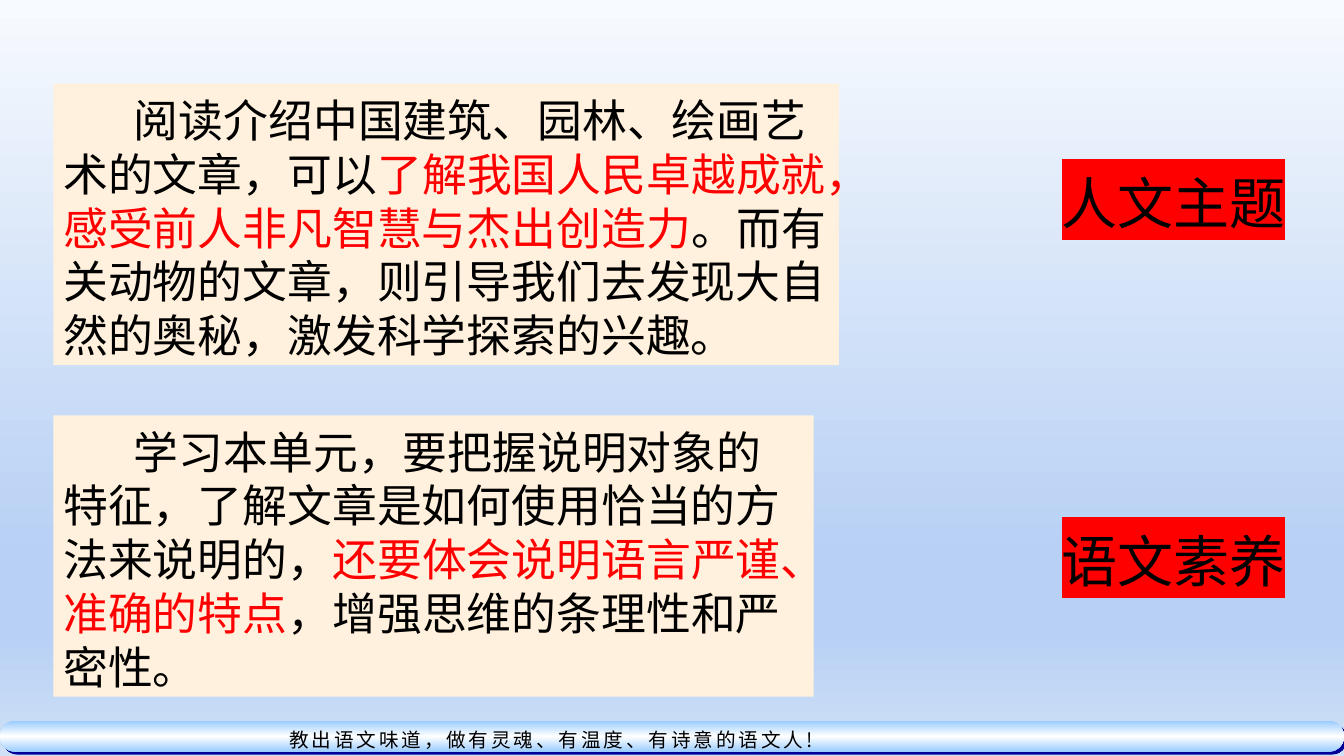
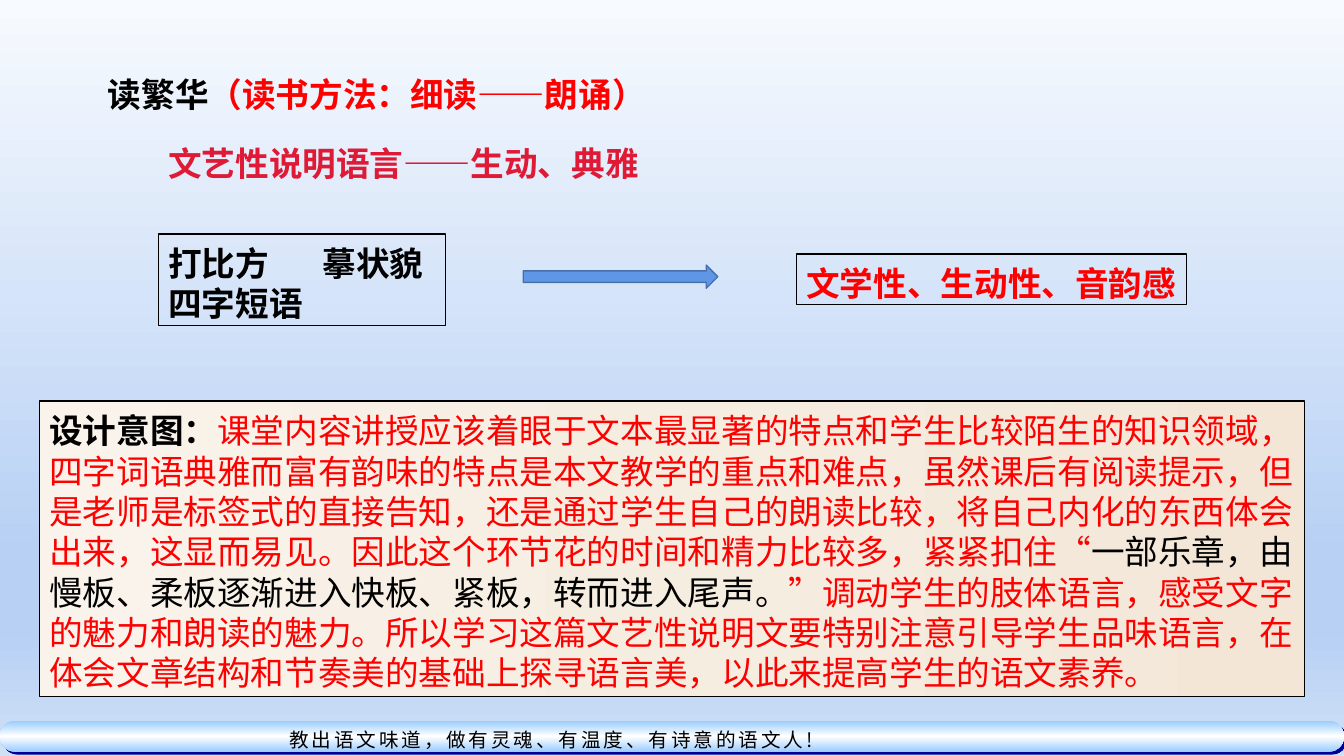
from lxml.etree import SubElement
from pptx import Presentation
from pptx.dml.color import RGBColor
from pptx.enum.shapes import MSO_SHAPE
from pptx.enum.text import MSO_ANCHOR, MSO_AUTO_SIZE, PP_ALIGN
from pptx.oxml import parse_xml
from pptx.oxml.ns import nsdecls, qn
from pptx.util import Inches, Pt

BLACK = RGBColor(0x00, 0x00, 0x00)
RED = RGBColor(0xFF, 0x00, 0x00)
CRIMSON = RGBColor(0xDE, 0x1A, 0x37)
CREAM = RGBColor(0xFF, 0xF1, 0xDD)
ARROW_FILL = RGBColor(0x60, 0x96, 0xE6)
ARROW_LINE = RGBColor(0x47, 0x6F, 0xAA)
PALE, SKY, MIST = (RGBColor(0xF7, 0xFA, 0xFE), RGBColor(0xB7, 0xD0, 0xF4),
                   RGBColor(0xCF, 0xE0, 0xF7))
BAND_BLUE, WHITE = RGBColor(0x99, 0xCC, 0xFF), RGBColor(0xFF, 0xFF, 0xFF)
BAND_SHADOW = RGBColor(0x00, 0x00, 0x99)
SAND = (RGBColor(0xF9, 0xF3, 0xEB), RGBColor(0xF6, 0xED, 0xE1), RGBColor(0xF3, 0xE6, 0xD7))

LATIN, CJK, FOOTER_FONT = "Arial", "Noto Sans CJK SC", "Noto Sans CJK JP"
LINE_FACTOR = 1.2

BACKGROUND_STOPS = [(0, PALE), (74, SKY), (83, SKY), (100, MIST)]
BAND_STOPS = [(0, BAND_BLUE), (50, WHITE), (100, BAND_BLUE)]
INTENT_STOPS = list(zip((0, 50, 100), SAND))
FOOTER = "教出语文味道，做有灵魂、有温度、有诗意的语文人!"

# A paragraph is a list of (text, colour, bold) runs.
PANEL = dict(size=32, fill=CREAM, indent=0.7)
TAG = dict(size=40, highlight=RED, wrap=False)
UNIT_GOALS = [
    dict(PANEL, at=(0.53, 0.83, 7.79, 2.79), paragraphs=[[
        ("阅读介绍中国建筑、园林、绘画艺术的文章，可以", BLACK, False),
        ("了解我国人民卓越成就，感受前人非凡智慧与杰出创造力", RED, False),
        ("。而有关动物的文章，则引导我们去发现大自然的奥秘，激发科学探索的兴趣。", BLACK, False)]]),
    dict(PANEL, at=(0.53, 4.12, 7.54, 2.79), paragraphs=[[
        ("学习本单元，要把握说明对象的特征，了解文章是如何使用恰当的方法来说明的，", BLACK, False),
        ("还要体会说明语言严谨、准确的特点", RED, False),
        ("，增强思维的条理性和严密性。", BLACK, False)]]),
    dict(TAG, at=(10.43, 1.58, 2.42, 0.77), paragraphs=[[("人文主题", BLACK, False)]]),
    dict(TAG, at=(10.43, 5.13, 2.42, 0.77), paragraphs=[[("语文素养", BLACK, False)]]),
]

READING_TITLE = dict(at=(0.97, 0.64, 6.64, 0.5), size=24, paragraphs=[[
    ("读繁华", BLACK, True), ("（读书方法：细读——朗诵）", RED, True)]])
READING_METHOD = [
    dict(at=(1.57, 1.33, 4.87, 0.5), size=24, wrap=False,
         paragraphs=[[("文艺性说明语言——生动、典雅", CRIMSON, True)]]),
    dict(at=(1.57, 2.32, 2.85, 0.91), size=24, outline=BLACK, tab=1.53,
         paragraphs=[[("打比方\t摹状貌", BLACK, True)], [("四字短语", BLACK, True)]]),
    dict(at=(7.9, 2.52, 3.87, 0.5), size=24, outline=BLACK, wrap=False,
         paragraphs=[[("文学性、生动性、音韵感", RED, True)]]),
    dict(at=(0.39, 3.98, 12.55, 2.93), size=24, outline=BLACK, stops=INTENT_STOPS, paragraphs=[[
        ("设计意图：", BLACK, True),
        ("课堂内容讲授应该着眼于文本最显著的特点和学生比较陌生的知识领域，四字词语典雅而富有韵味的特点"
         "是本文教学的重点和难点，虽然课后有阅读提示，但是老师是标签式的直接告知，还是通过学生自己的朗读比较，"
         "将自己内化的东西体会出来，这显而易见。因此这个环节花的时间和精力比较多，紧紧扣住“", RED, False),
        ("一部乐章，由慢板、柔板逐渐进入快板、紧板，转而进入尾声。", BLACK, False),
        ("”调动学生的肢体语言，感受文字的魅力和朗读的魅力。所以学习这篇文艺性说明文要特别注意引导学生品味语言，"
         "在体会文章结构和节奏美的基础上探寻语言美，以此来提高学生的语文素养。", RED, False)]]),
]
ARROW_AT = (5.19, 2.63, 1.93, 0.23)


def inches(box):
    return [Inches(value) for value in box]


def set_all(target, values):
    for name, value in values.items():
        setattr(target, name, value)


def set_gradient(fill, owner, stops, angle):
    """Fill with any number of (percent, colour) stops, angle in degrees clockwise."""
    fill.gradient()
    gradient = next(owner.iter(qn("a:gradFill")))
    stop_list = gradient.find(qn("a:gsLst"))
    stop_list.clear()
    for percent, colour in stops:
        stop = SubElement(stop_list, qn("a:gs"), pos=str(percent * 1000))
        SubElement(stop, qn("a:srgbClr"), val=str(colour))
    direction = gradient.find(qn("a:lin"))
    direction.set("ang", str(angle * 60000))
    direction.set("scaled", "0")


def style_run(run, size, colour, bold=False, latin=LATIN, cjk=CJK, highlight=None):
    set_all(run.font, dict(size=Pt(size), bold=bold, name=latin))
    run.font.color.rgb = colour
    properties = run.font._element if hasattr(run.font, "_element") else run._r.get_or_add_rPr()
    latin_font = properties.find(qn("a:latin"))
    latin_font.addnext(parse_xml(f'<a:ea {nsdecls("a")} typeface="{cjk}"/>'))
    if highlight is not None:
        latin_font.addprevious(parse_xml(
            f'<a:highlight {nsdecls("a")}><a:srgbClr val="{highlight}"/></a:highlight>'))
    return properties


def write_text(shape, content):
    frame = shape.text_frame
    set_all(frame, dict(
        auto_size=MSO_AUTO_SIZE.NONE, word_wrap=content.get("wrap", True),
        vertical_anchor=MSO_ANCHOR.TOP, margin_left=Inches(0.1), margin_right=Inches(0.1),
        margin_top=Inches(0.09), margin_bottom=Inches(0.01)))
    size = content["size"]
    for index, runs in enumerate(content["paragraphs"]):
        paragraph = frame.add_paragraph() if index else frame.paragraphs[0]
        properties = paragraph._p.get_or_add_pPr()
        if "indent" in content:
            properties.set("indent", str(Inches(content["indent"])))
        if "tab" in content:
            properties.append(parse_xml(
                f'<a:tabLst {nsdecls("a")}><a:tab pos="{Inches(content["tab"])}" algn="l"/></a:tabLst>'))
        set_all(paragraph, dict(alignment=PP_ALIGN.LEFT, line_spacing=Pt(size * LINE_FACTOR)))
        for text, colour, bold in runs:
            run = paragraph.add_run()
            run.text = text
            style_run(run, size, colour, bold, highlight=content.get("highlight"))


def add_block(slide, content):
    block = slide.shapes.add_textbox(*inches(content["at"]))
    if "fill" in content:
        block.fill.solid()
        block.fill.fore_color.rgb = content["fill"]
    if "stops" in content:
        set_gradient(block.fill, block.element, content["stops"], 0)
    if "outline" in content:
        block.line.color.rgb = content["outline"]
        block.line.width = Pt(1)
    write_text(block, content)


def build_master(master, slide):
    """Give the master its background, band and footer, drawn on a slide and moved over."""
    set_gradient(master.background.fill, master.element, BACKGROUND_STOPS, 90)

    band = slide.shapes.add_shape(MSO_SHAPE.ROUNDED_RECTANGLE, *inches((0, 7.15, 13.33, 0.31)))
    band.adjustments[0] = 0.5
    set_gradient(band.fill, band.element, BAND_STOPS, 90)
    band.line.fill.background()
    band.shadow.inherit = False
    next(band.element.iter(qn("a:effectLst"))).append(parse_xml(
        f'<a:outerShdw {nsdecls("a")} blurRad="0" dist="{Pt(2.8)}" dir="2700000" algn="ctr" '
        f'rotWithShape="0"><a:srgbClr val="{BAND_SHADOW}"/></a:outerShdw>'))

    motto = slide.shapes.add_textbox(*inches((2.71, 7.15, 5.51, 0.38)))
    motto.text_frame.word_wrap = True
    paragraph = motto.text_frame.paragraphs[0]
    set_all(paragraph, dict(alignment=PP_ALIGN.CENTER, line_spacing=1.1))
    run = paragraph.add_run()
    run.text = FOOTER
    style_run(run, 14, BLACK, latin=FOOTER_FONT, cjk=FOOTER_FONT).set("spc", "200")

    for part in (band, motto):
        master.shapes.element.append(part.element)


def main():
    presentation = Presentation()
    set_all(presentation, dict(slide_width=Inches(13.33), slide_height=Inches(7.5)))
    title_only, blank = presentation.slide_layouts[5], presentation.slide_layouts[6]

    goals = presentation.slides.add_slide(blank)
    build_master(presentation.slide_master, goals)
    for content in UNIT_GOALS:
        add_block(goals, content)

    reading = presentation.slides.add_slide(title_only)
    title = reading.shapes.title
    set_all(title, dict(zip(("left", "top", "width", "height"), inches(READING_TITLE["at"]))))
    write_text(title, READING_TITLE)
    for content in READING_METHOD:
        add_block(reading, content)
    arrow = reading.shapes.add_shape(MSO_SHAPE.RIGHT_ARROW, *inches(ARROW_AT))
    arrow.shadow.inherit = False
    arrow.fill.solid()
    arrow.fill.fore_color.rgb = ARROW_FILL
    arrow.line.color.rgb = ARROW_LINE
    arrow.line.width = Pt(1)

    presentation.save("out.pptx")


if __name__ == "__main__":
    main()
